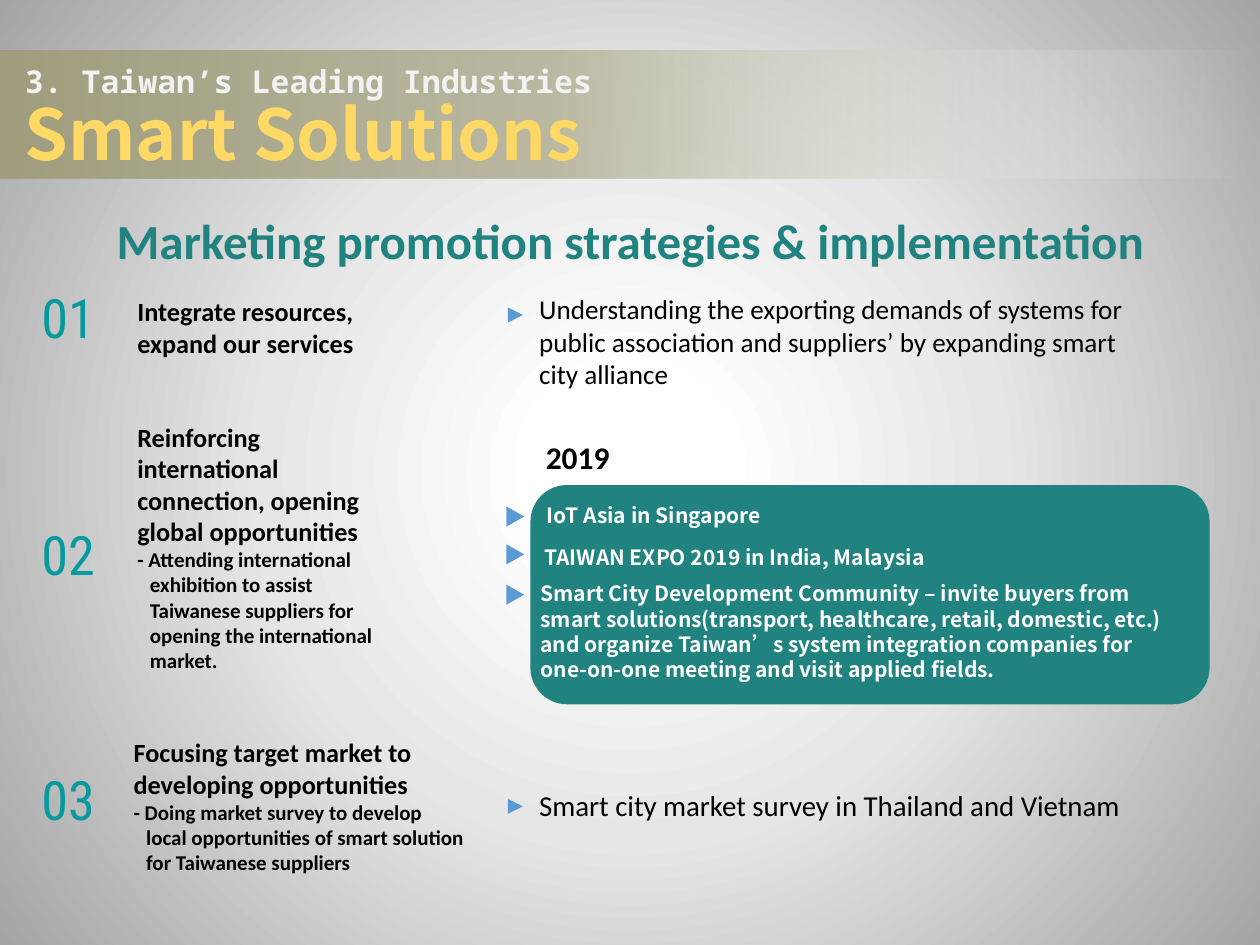
from lxml import etree
from pptx import Presentation
from pptx.dml.color import RGBColor
from pptx.enum import shapes, text
from pptx.oxml.ns import qn
from pptx.util import Inches, Pt

TEAL, BLUE, NUMBER = "218380", "5B9BD5", "069A9E"
WHITE, BLACK = "FFFFFF", "000000"
CJK = "Noto Sans CJK SC"
SMALL_INSETS = (0.07, 0.04)


def rgb(value):
    return RGBColor.from_string(value)


def set_gradient(root, stops, circle=False):
    grad = next(root.iter(qn("a:gradFill")))
    for child in list(grad):
        grad.remove(child)
    gs_list = etree.SubElement(grad, qn("a:gsLst"))
    for pos, color, alpha in stops:
        gs = etree.SubElement(gs_list, qn("a:gs"), pos=str(pos * 1000))
        clr = etree.SubElement(gs, qn("a:srgbClr"), val=color)
        if alpha < 100:
            etree.SubElement(clr, qn("a:alpha"), val=str(alpha * 1000))
    if circle:
        path = etree.SubElement(grad, qn("a:path"), path="circle")
        sides = dict.fromkeys("ltrb", "50000")
        etree.SubElement(path, qn("a:fillToRect"), **sides)
    else:
        etree.SubElement(grad, qn("a:lin"), ang="0", scaled="0")


class Deck:
    def __init__(self, width, height):
        self.prs = Presentation()
        self.prs.slide_width, self.prs.slide_height = Inches(width), Inches(height)
        self.s = self.prs.slides.add_slide(self.prs.slide_layouts[6])

    def background(self, stops):
        self.s.background.fill.gradient()
        set_gradient(self.s.element, stops, circle=True)

    def shape(self, kind, box, color):
        sp = self.s.shapes.add_shape(kind, *map(Inches, box))
        sp.shadow.inherit = False
        sp.line.fill.background()
        if color:
            sp.fill.solid()
            sp.fill.fore_color.rgb = rgb(color)
        return sp

    def band(self, box, stops):
        sp = self.shape(shapes.MSO_SHAPE.RECTANGLE, box, None)
        sp.fill.gradient()
        set_gradient(sp.element, stops)

    def marker(self, box):
        self.shape(shapes.MSO_SHAPE.ISOSCELES_TRIANGLE, box, BLUE).rotation = 90

    def frame(self, box, insets=(0.1, 0.05), middle=True):
        tf = self.s.shapes.add_textbox(*map(Inches, box)).text_frame
        tf.word_wrap = True
        tf.margin_left = tf.margin_right = Inches(insets[0])
        tf.margin_top = tf.margin_bottom = Inches(insets[1])
        if middle:
            tf.vertical_anchor = text.MSO_ANCHOR.MIDDLE
        return tf

    def style(self, font, size, color, name="Calibri", bold=False):
        font.size, font.name, font.bold = Pt(size), name, bold
        font.color.rgb = rgb(color)

    def label(self, box, words, size, color=BLACK, name="Calibri", bold=False,
              center=False, spacing=None, **frame):
        p = self.frame(box, **frame).paragraphs[0]
        p.text = words
        if center:
            p.alignment = text.PP_ALIGN.CENTER
        p.line_spacing = spacing
        self.style(p.font, size, color, name, bold)

    def strategy(self, box, headings, detail=None):
        tf = self.frame(box, SMALL_INSETS)
        lines = [(words, 15) for words in headings]
        if detail:
            lines.append(("- " + detail, 12))
        for i, (words, size) in enumerate(lines):
            p = tf.add_paragraph() if i else tf.paragraphs[0]
            p.text = words
            if size == 12:
                pPr = p._p.get_or_add_pPr()
                pPr.set("marL", str(Inches(0.1)))
                pPr.set("indent", str(Inches(-0.1)))
            self.style(p.font, size, BLACK, bold=True)

    def title(self, box, section, topic):
        p = self.frame(box).paragraphs[0]
        p.line_spacing = 0.9
        r = p.add_run()
        r.text = section
        self.style(r.font, 18, "F2F2F2", "Noto Sans Mono", True)
        p.add_line_break()
        r = p.add_run()
        r.text = topic
        self.style(r.font, 40, "FFD966", "Noto Sans CJK TC", True)


def main():
    d = Deck(10, 7.5)
    d.background([(12, WHITE, 100), (47, "E7E6E6", 100), (100, "A5A5A5", 100)])
    d.band((0, 0.4, 10.56, 1.02), [(1, "9F9D7D", 100), (41, "BAB8A1", 100),
                                   (72, "DBDACF", 37), (94, WHITE, 0)])
    d.title((0.1, 0.45, 9.76, 1.02), "3. Taiwan’s Leading Industries", "Smart Solutions")
    d.label((-0.76, 1.56, 11.52, 0.61), "Marketing promotion strategies & implementation",
            28, TEAL, bold=True, center=True, spacing=1.14, middle=False)

    for i, top in enumerate((2.29, 4.17, 6.12), 1):
        d.label((0.29, top, 0.5, 0.54), f"{i:02}", 31, NUMBER, "Roboto Condensed",
                center=True, spacing=0.8, insets=(0, 0.05))

    d.strategy((1.02, 2.48, 2.36, 0.23), ["Integrate resources,", "expand our services"])
    d.strategy((1.02, 4.21, 2.16, 0.26),
               ["Reinforcing international connection, opening global opportunities"],
               "Attending international exhibition to assist Taiwanese suppliers "
               "for opening the international market.")
    d.strategy((0.99, 6.31, 2.79, 0.17),
               ["Focusing target market to developing opportunities"],
               "Doing market survey to develop local opportunities of smart solution "
               "for Taiwanese suppliers")

    actions = [
        (2.44, (4.21, 2.61, 5, 0.2), 15.5,
         "Understanding the exporting demands of systems for public association "
         "and suppliers’ by expanding smart city alliance"),
        (6.34, (4.21, 6.24, 5, 0.29), 16.5,
         "Smart city market survey in Thailand and Vietnam"),
    ]
    for marker_top, box, size, words in actions:
        d.marker((4.03, marker_top, 0.12, 0.12))
        d.label(box, words, size, insets=SMALL_INSETS)

    d.label((4.22, 3.43, 0.73, 0.4), "2019", 18, bold=True, center=True, middle=False)
    d.shape(shapes.MSO_SHAPE.ROUNDED_RECTANGLE, (4.21, 3.85, 5.39, 1.74), TEAL)
    events = [
        (4.03, (4.27, 3.92, 4.12, 0.34), "IoT Asia in Singapore"),
        (4.33, (4.25, 4.25, 5.29, 0.34), "TAIWAN EXPO 2019 in India, Malaysia"),
        (4.65, (4.22, 4.64, 5.24, 0.74),
         "Smart City Development Community – invite buyers from smart "
         "solutions(transport, healthcare, retail, domestic, etc.) and organize "
         "Taiwan’s system integration companies for one-on-one meeting and visit "
         "applied fields."),
    ]
    for marker_top, box, words in events:
        d.marker((4.01, marker_top, 0.16, 0.14))
        d.label(box, words, 12, WHITE, CJK, bold=True, insets=SMALL_INSETS)

    d.prs.save("out.pptx")


if __name__ == "__main__":
    main()
